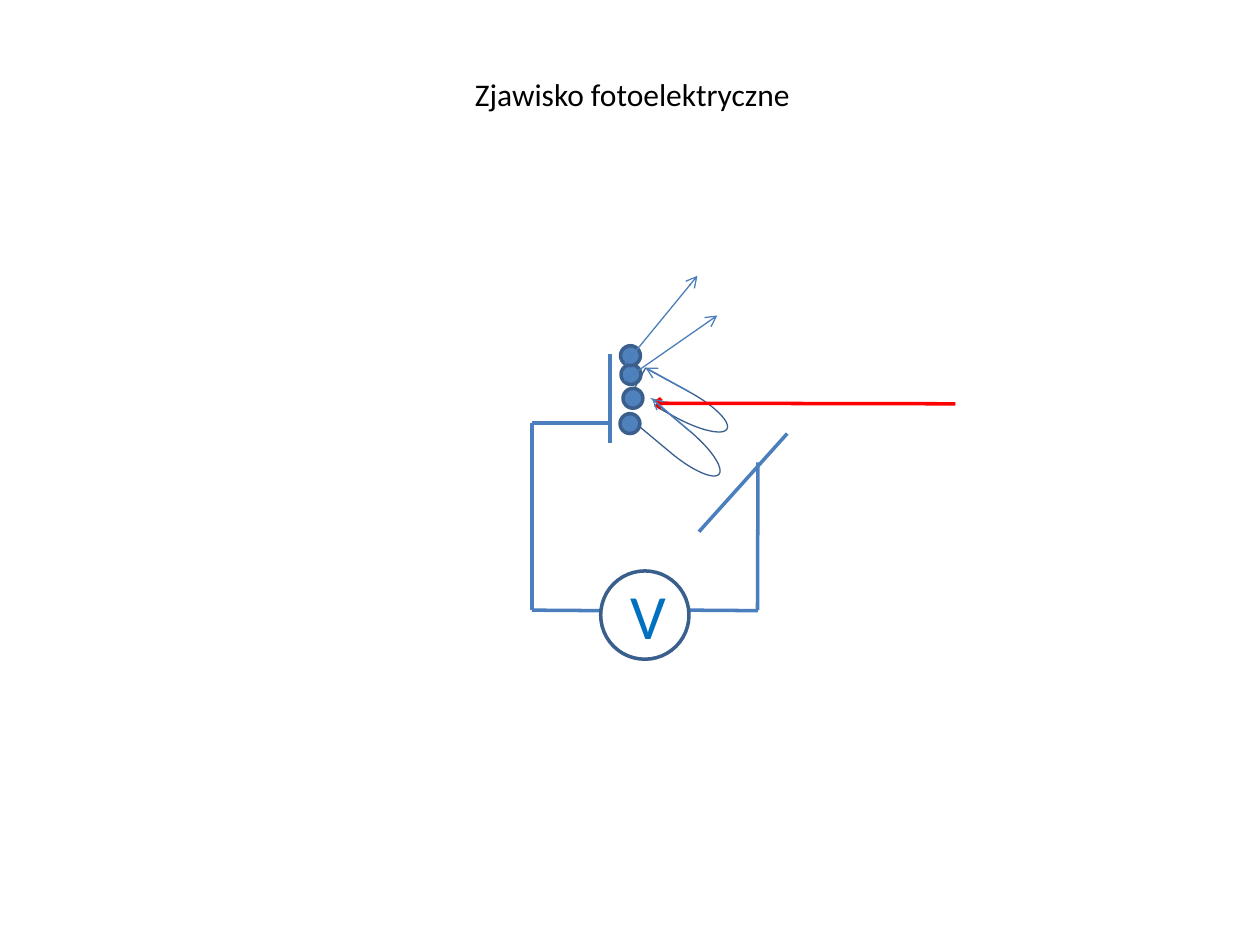
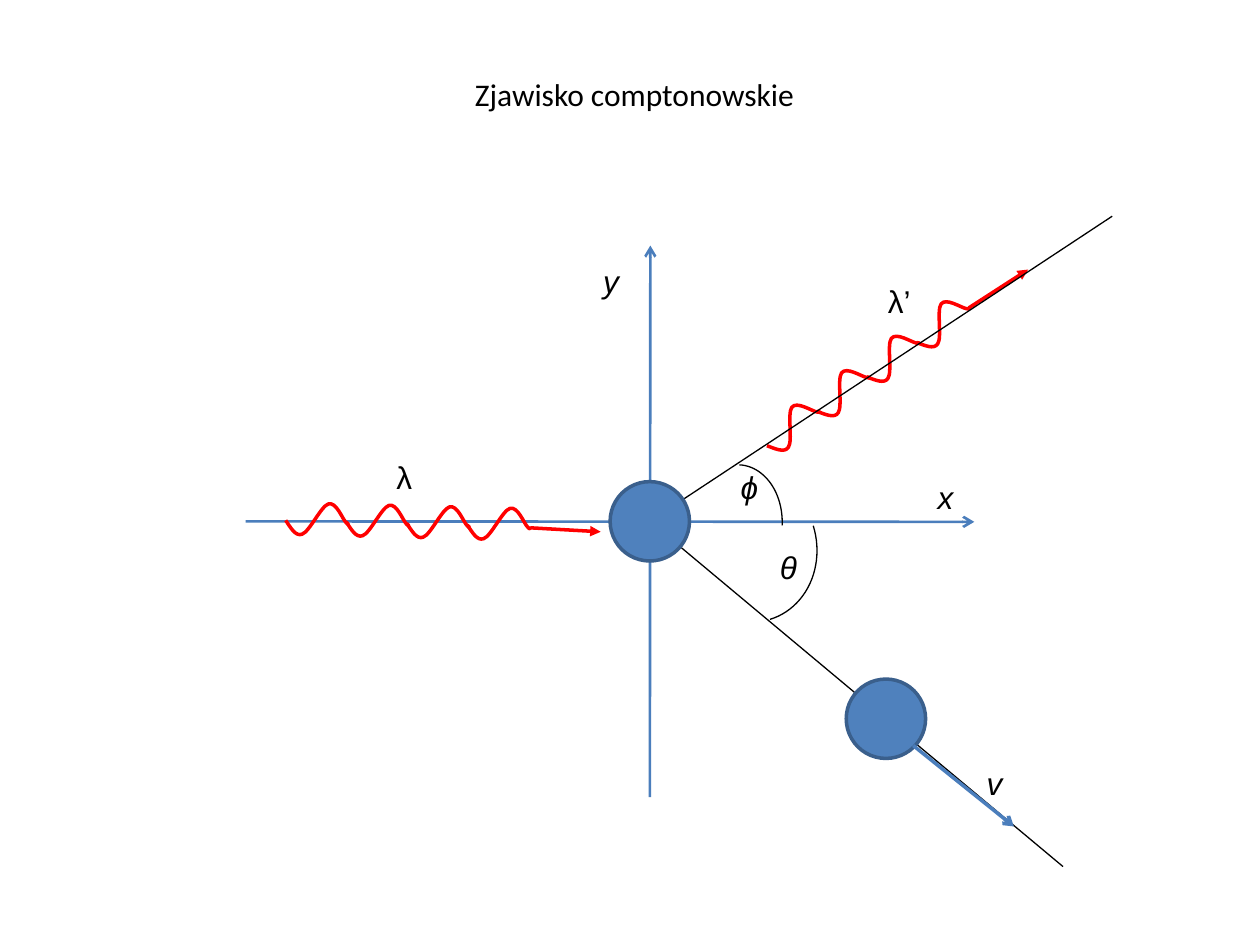
import math

import pptx
import pptx.dml.color
import pptx.enum.shapes
import pptx.enum.text
import pptx.oxml.ns
import pptx.util
from lxml import etree

Cm = pptx.util.Cm
Pt = pptx.util.Pt
SHAPE = pptx.enum.shapes.MSO_SHAPE
qn = pptx.oxml.ns.qn

BLUE, FILL, OUTLINE = "4B7EBC", "4F81BD", "3A5F8C"
RED, BLACK, WHITE, VOLT = "FF0000", "000000", "FFFFFF", "0070C0"
THIN, AXIS, THICK = 0.75, 1.5, 2

WAVE = [
    (0, 0),
    (0.1, 0.15), (0.2, 0.33), (0.33, 0.28),
    (0.48, 0.23), (0.71, -0.28), (0.86, -0.33),
    (1.02, -0.38), (1.14, -0.03), (1.22, 0.05),
    (1.27, 0.1), (1.27, 0.08), (1.24, 0.05),
]
WAVE_CENTER = (0.64, -0.02)
WAVE_STEP = (1.22, 0.03)
WAVE_COUNT = 4


def rgb(code):
    """Return the colour for a hex string."""
    return pptx.dml.color.RGBColor.from_string(code)


def style_text(frame, text, size, font, color, italic=False):
    """Write one unwrapped, left-aligned line of text."""
    frame.text = text
    frame.word_wrap = False
    frame.auto_size = pptx.enum.text.MSO_AUTO_SIZE.SHAPE_TO_FIT_TEXT
    frame.vertical_anchor = pptx.enum.text.MSO_ANCHOR.TOP
    line = frame.paragraphs[0]
    line.alignment = pptx.enum.text.PP_ALIGN.LEFT
    line.font.size = Pt(size)
    line.font.name = font
    line.font.italic = italic
    line.font.color.rgb = rgb(color)


def bend(outline):
    """Turn each three straight segments of an outline into one cubic curve."""
    segments = list(outline.iter(qn("a:lnTo")))
    for first in range(0, len(segments), 3):
        curve = etree.Element(qn("a:cubicBezTo"))
        segments[first].addprevious(curve)
        for segment in segments[first:first + 3]:
            curve.append(segment[0])
            segment.getparent().remove(segment)


class Region:
    """A part of a slide whose shapes are placed in centimetres from its origin."""

    def __init__(self, slide, left, top):
        """Keep the shape tree and the origin."""
        self.shapes, self.left, self.top = slide.shapes, left, top

    def at(self, point):
        """Return slide coordinates of a point in the region."""
        return Cm(self.left + point[0]), Cm(self.top + point[1])

    def line(self, start, end, color=BLUE, width=THICK, head=None):
        """Draw a straight line, with an arrowhead at its end if one is named."""
        kind = pptx.enum.shapes.MSO_CONNECTOR.STRAIGHT
        connector = self.shapes.add_connector(kind, *self.at(start), *self.at(end))
        connector.line.color.rgb = rgb(color)
        connector.line.width = Pt(width)
        properties = connector.element.spPr
        if head:
            etree.SubElement(properties.find(qn("a:ln")), qn("a:tailEnd"), type=head)
        etree.SubElement(properties, qn("a:effectLst"))

    def shape(self, kind, corner, size, fill=None, color=None, width=THICK, turn=0):
        """Draw a preset shape."""
        figure = self.shapes.add_shape(kind, *self.at(corner), Cm(size[0]), Cm(size[1]))
        figure.rotation = turn
        self.paint(figure, fill, color, width)

    def paint(self, figure, fill, color, width):
        """Set fill and outline and remove the shadow."""
        figure.shadow.inherit = False
        if fill:
            figure.fill.solid()
            figure.fill.fore_color.rgb = rgb(fill)
        else:
            figure.fill.background()
        if color:
            figure.line.color.rgb = rgb(color)
            figure.line.width = Pt(width)
        else:
            figure.line.fill.background()

    def ball(self, center, radius, fill=FILL):
        """Draw an outlined circle around a centre."""
        corner = (center[0] - radius, center[1] - radius)
        self.shape(SHAPE.OVAL, corner, (2 * radius, 2 * radius), fill, OUTLINE)

    def curve(self, points, turn):
        """Draw an open red curve through cubic control points."""
        first, *rest = [self.at(point) for point in points]
        builder = self.shapes.build_freeform(*first)
        builder.add_line_segments(rest, close=False)
        figure = builder.convert_to_shape()
        bend(figure.element.spPr)
        figure.rotation = turn
        self.paint(figure, None, RED, THICK)

    def label(self, corner, text, italic=True, size=18, font="Arial", color=BLACK,
              extent=(0.85, 1.02)):
        """Write a short label."""
        box = self.shapes.add_textbox(*self.at(corner), Cm(extent[0]), Cm(extent[1]))
        style_text(box.text_frame, text, size, font, color, italic)


def titled_slide(deck, text, width):
    """Add a slide with its title."""
    slide = deck.slides.add_slide(deck.slide_layouts[5])
    title = slide.shapes.title
    title.left, title.top, title.width, title.height = Cm(9.32), Cm(1.38), Cm(width), Cm(1.02)
    style_text(title.text_frame, text, 18, "Calibri", BLACK)
    return slide


def draw_emission(slide, left, top):
    """Draw the light ray and the electrons that escape or turn back."""
    area = Region(slide, left, top)
    loop_size = (2.03, 0.58)
    area.shape(SHAPE.FLOWCHART_DELAY, (0.25, 2.31), loop_size, None, OUTLINE, THIN, 28.6)
    area.line((1.4, 2.34), (0.51, 1.85), width=THIN, head="arrow")
    area.line((6.76, 2.58), (0.61, 2.57), RED, head="arrow")
    area.shape(SHAPE.FLOWCHART_DELAY, (0.2, 3.06), loop_size, None, OUTLINE, THIN, 39.8)
    area.shape(SHAPE.RECTANGLE, (0.23, 2.39), (0.28, 0.79), WHITE, turn=39.8)
    area.line((1.4, 3.13), (0.64, 2.47), width=THIN, head="arrow")
    electrons = [
        ((0.2, 2.98), None),
        ((0.22, 1.99), ((0.08, 2.11), (1.96, 0.8))),
        ((0.26, 2.47), None),
        ((0.21, 1.61), ((0.1, 1.78), (1.56, 0))),
    ]
    for center, escape in electrons:
        area.ball(center, 0.2)
        if escape:
            area.line(*escape, width=THIN, head="arrow")


def draw_circuit(slide, left, top):
    """Draw the plates, the wires and the voltmeter."""
    area = Region(slide, left, top)
    plates = [((1.58, 0), (1.58, 1.8)), ((5.15, 1.6), (3.37, 3.58))]
    wires = [
        ((1.57, 1.39), (0, 1.39)),
        ((0, 1.39), (0, 5.16)),
        ((1.4, 5.17), (0, 5.16)),
        ((4.56, 5.17), (3.18, 5.16)),
        ((4.56, 2.18), (4.55, 5.16)),
    ]
    for start, end in plates + wires:
        area.line(start, end)
    area.ball((2.28, 5.26), 0.89, None)
    area.label((1.75, 4.36), "V", False, 36, "Calibri", VOLT, (1.24, 1.8))


def draw_photon(area, start, degrees):
    """Draw a wave train and its arrow, turned about its start."""
    cos, sin = math.cos(math.radians(degrees)), math.sin(math.radians(degrees))

    def turned(x, y):
        """Turn a point of the wave train and move it to the start."""
        return start[0] + x * cos - y * sin, start[1] + x * sin + y * cos

    middle_x, middle_y = WAVE_CENTER
    for index in range(WAVE_COUNT):
        dx, dy = (index * step for step in WAVE_STEP)
        center_x, center_y = turned(middle_x + dx, middle_y + dy)
        period = [(center_x + x - middle_x, center_y + y - middle_y) for x, y in WAVE]
        area.curve(period, degrees)
    area.line(turned(4.93, 0.15), turned(6.35, 0.23), RED, head="triangle")


def draw_scattering(slide, left, top):
    """Draw the collision around the target electron at the origin."""
    area = Region(slide, left, top)
    target, recoil, radius = (0, 0), (4.76, 3.98), 0.8
    area.line((0, 5.56), (0.01, -5.56), width=AXIS, head="arrow")
    area.line((-8.15, 0), (6.54, 0.01), width=AXIS, head="arrow")
    draw_photon(area, (2.36, -1.52), -36.1)
    for direction in [(9.32, -6.15), (8.33, 6.96)]:
        area.line(target, direction, BLACK, THIN)
    area.ball(recoil, radius)
    area.shape(SHAPE.ARC, (0.84, -1.14), (1.83, 2.36), None, BLACK, THIN, 2.6)
    area.shape(SHAPE.ARC, (0.42, -0.89), (3.1, 2.77), None, BLACK, THIN, 73)
    area.line((5.31, 4.52), (7.34, 6.15), head="arrow")
    draw_photon(area, (-7.34, -0.02), 0)
    area.ball(target, radius)
    symbols = [
        ("ϕ", (1.58, -1.19)), ("θ", (2.37, 0.41)), ("v", (6.54, 4.77)),
        ("y", (-1.19, -5.36)), ("x", (5.55, -0.99)),
    ]
    for symbol, corner in symbols:
        area.label(corner, symbol)
    for wavelength, corner in [("λ", (-5.36, -1.4)), ("λ’", (4.55, -4.95))]:
        area.label(corner, wavelength, italic=False, extent=(1.02, 1.02))


def main():
    """Build both slides and save the deck."""
    deck = pptx.Presentation()
    deck.slide_width, deck.slide_height = Cm(25.4), Cm(19.05)
    photoelectric = titled_slide(deck, "Zjawisko fotoelektryczne", 6.91)
    draw_emission(photoelectric, 12.5, 5.56)
    draw_circuit(photoelectric, 10.72, 7.14)
    compton = titled_slide(deck, "Zjawisko comptonowskie", 7.01)
    draw_scattering(compton, 13.1, 10.51)
    deck.save("out.pptx")


if __name__ == "__main__":
    main()
